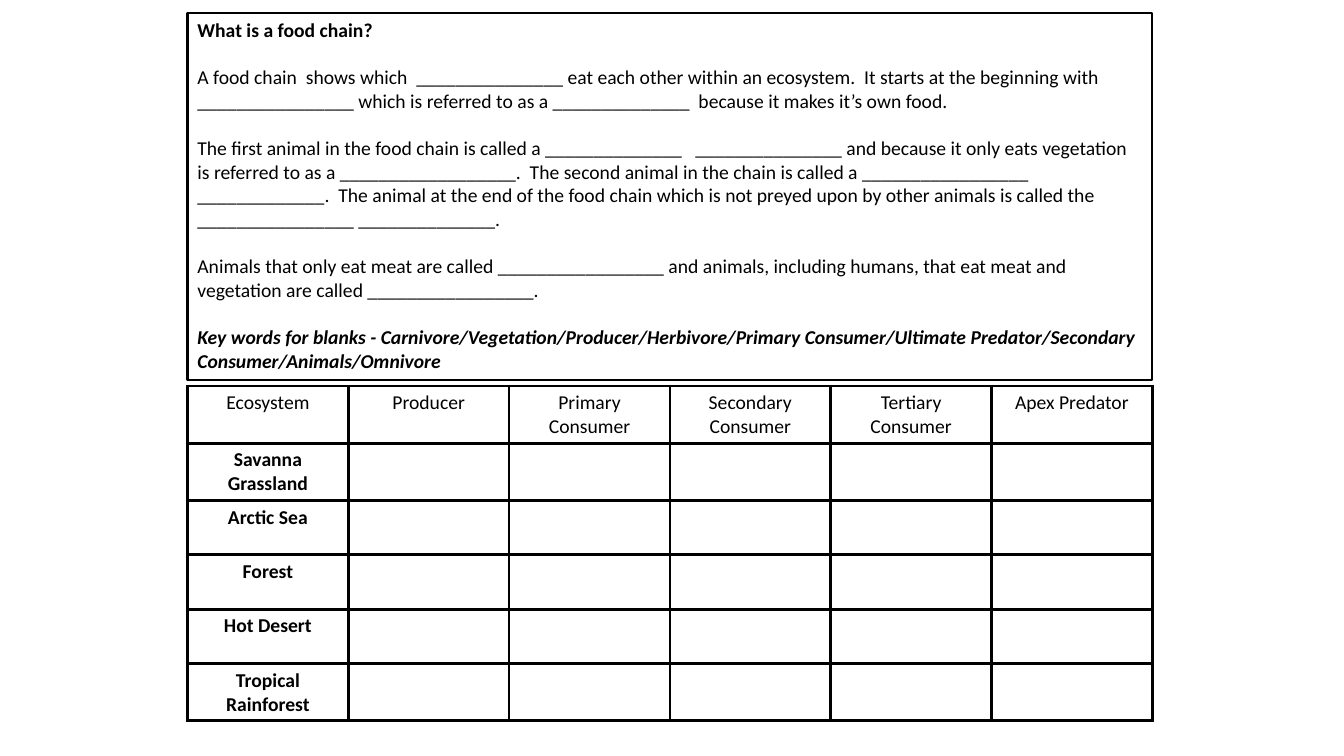
from pptx import Presentation
from pptx.dml.color import RGBColor
from pptx.enum.text import MSO_AUTO_SIZE, PP_ALIGN
from pptx.oxml import parse_xml
from pptx.oxml.ns import nsdecls
from pptx.util import Inches, Pt

CENTER = PP_ALIGN.CENTER
GROW = MSO_AUTO_SIZE.SHAPE_TO_FIT_TEXT
BLANK_LAYOUT = 6
BLACK = "000000"
FONT = "Calibri"
TEXT_SIZE = 14
LINE_GAP = 17
LEFT, WIDTH = 1.86, 9.57

HEADING = "What is a food chain?"
PASSAGES = [
    "A food chain  shows which  _______________ eat each other within an ecosystem.  "
    "It starts at the beginning with ________________ which is referred to as a "
    "______________  because it makes it’s own food.",
    "The first animal in the food chain is called a ______________   _______________ "
    "and because it only eats vegetation is referred to as a __________________.  "
    "The second animal in the chain is called a _________________ _____________.  "
    "The animal at the end of the food chain which is not preyed upon by other animals "
    "is called the  ________________ ______________.",
    "Animals that only eat meat are called _________________ and animals, including "
    "humans, that eat meat and vegetation are called _________________.",
]
KEY_WORDS = (
    "Key words for blanks - Carnivore/Vegetation/Producer/Herbivore/Primary Consumer/"
    "Ultimate Predator/Secondary Consumer/Animals/Omnivore"
)
COLUMNS = ["Ecosystem", "Producer", "Primary Consumer", "Secondary Consumer",
           "Tertiary Consumer", "Apex Predator"]
ECOSYSTEMS = ["Savanna Grassland", "Arctic Sea", "Forest", "Hot Desert",
              "Tropical Rainforest"]
ROW_HEIGHTS = [0.56, 0.56, 0.54, 0.54, 0.54, 0.56]


def color(value):
    return RGBColor.from_string(value)


def write(para, text, bold=False, italic=False):
    para.text = text
    font = para.font
    font.name, font.size = FONT, Pt(TEXT_SIZE)
    font.bold, font.italic = bold, italic
    font.color.rgb = color(BLACK)


def add_worksheet_box(slide):
    box = slide.shapes.add_textbox(Inches(LEFT), Inches(0.13), Inches(WIDTH), Inches(3.64))
    box.line.color.rgb = color(BLACK)
    box.line.width = Pt(1.5)
    frame = box.text_frame
    frame.word_wrap = True
    frame.auto_size = GROW
    write(frame.paragraphs[0], HEADING, bold=True)
    for text in PASSAGES + [KEY_WORDS]:
        para = frame.add_paragraph()
        is_key = text == KEY_WORDS
        write(para, text, bold=is_key, italic=is_key)
        para.space_before = Pt(LINE_GAP)


def border_cell(cell, width):
    properties = cell._tc.get_or_add_tcPr()
    for side in ("lnL", "lnR", "lnT", "lnB"):
        properties.append(parse_xml(
            f'<a:{side} {nsdecls("a")} w="{Pt(width)}"><a:solidFill>'
            f'<a:srgbClr val="{BLACK}"/></a:solidFill></a:{side}>'))


def add_ecosystem_table(slide):
    table = slide.shapes.add_table(
        len(ROW_HEIGHTS), len(COLUMNS), Inches(LEFT), Inches(3.83),
        Inches(WIDTH), Inches(sum(ROW_HEIGHTS))).table
    table.first_row = table.horz_banding = False
    for row, height in zip(table.rows, ROW_HEIGHTS):
        row.height = Inches(height)
    for cell in table.iter_cells():
        border_cell(cell, 2.25)
        cell.fill.background()
    headers = [(0, column, name) for column, name in enumerate(COLUMNS)]
    labels = [(row, 0, name) for row, name in enumerate(ECOSYSTEMS, 1)]
    for row, column, name in headers + labels:
        para = table.cell(row, column).text_frame.paragraphs[0]
        write(para, name, bold=row > 0)
        para.alignment = CENTER


def main():
    deck = Presentation()
    deck.slide_width, deck.slide_height = Inches(13.33), Inches(7.5)
    slide = deck.slides.add_slide(deck.slide_layouts[BLANK_LAYOUT])
    add_worksheet_box(slide)
    add_ecosystem_table(slide)
    deck.save("out.pptx")


if __name__ == "__main__":
    main()
